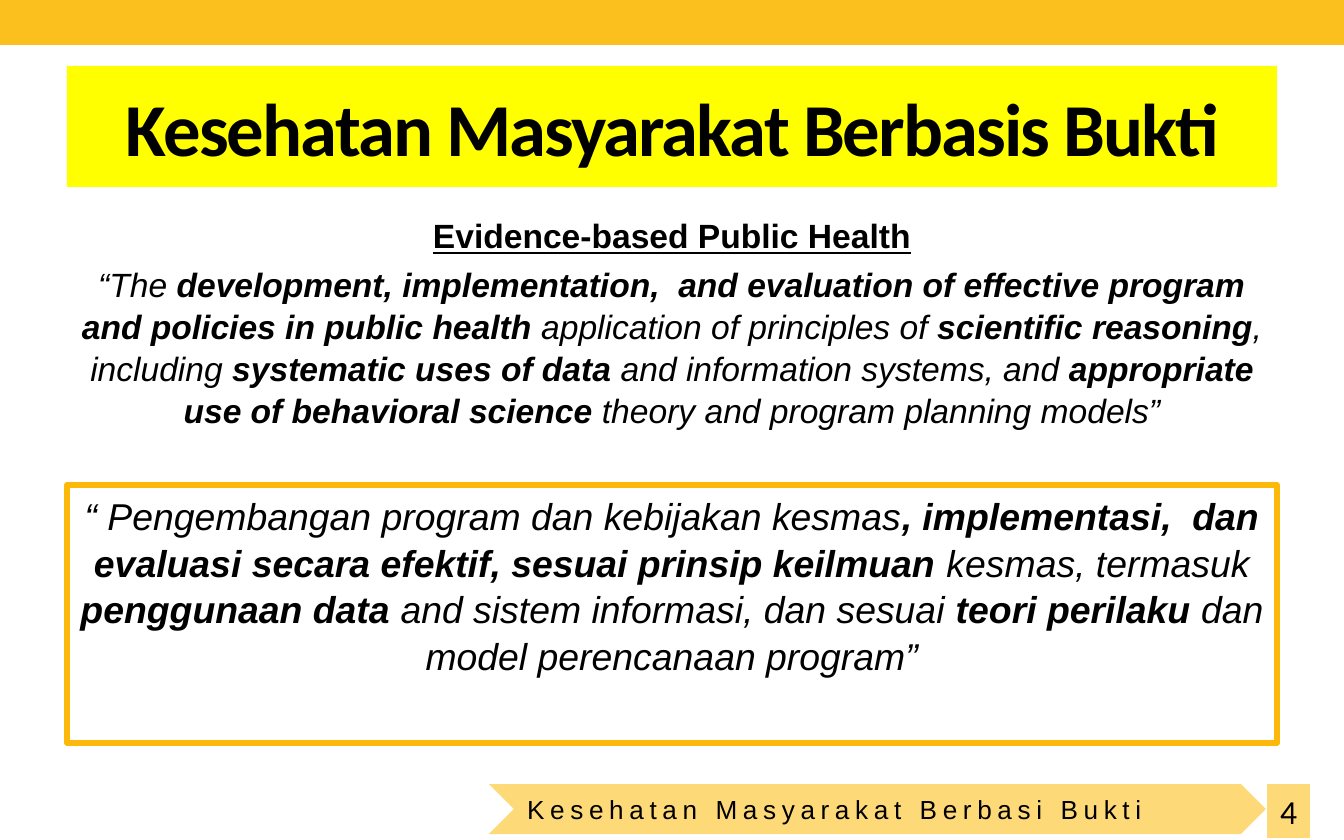
from lxml.etree import SubElement
from pptx import Presentation
from pptx.dml.color import RGBColor
from pptx.enum.shapes import MSO_SHAPE
from pptx.enum.text import MSO_ANCHOR, MSO_AUTO_SIZE, PP_ALIGN
from pptx.oxml.ns import qn
from pptx.util import Emu, Pt

WIDE, HIGH = 1344, 840
SCALE = 9144000 / WIDE
GOLD = RGBColor(0xFB, 0xC0, 0x1E)
AMBER = RGBColor(0xFE, 0xB8, 0x0A)
SAND = RGBColor(0xFD, 0xD9, 0x78)
YELLOW = RGBColor(0xFF, 0xFF, 0x00)
BLACK = RGBColor(0, 0, 0)

# Regular and bold runs take turns
ENGLISH = [
    "“The ",
    "development, implementation,  and evaluation of effective program "
    "and policies in public health ",
    "application of principles of ",
    "scientific reasoning",
    ", including ",
    "systematic uses of data ",
    "and information systems, and ",
    "appropriate use of behavioral science ",
    "theory and program planning models”",
]
LOCAL = [
    "“ Pengembangan program dan kebijakan kesmas",
    ", implementasi,  dan evaluasi secara efektif, sesuai prinsip keilmuan ",
    "kesmas, termasuk ",
    "penggunaan data ",
    "and sistem informasi, dan sesuai ",
    "teori perilaku ",
    "dan model perencanaan program”",
]


def px(n):
    return Emu(round(n * SCALE))


def place(shape, box):
    shape.left, shape.top, shape.width, shape.height = map(px, box)


def add_box(slide, box, fill=None, kind=MSO_SHAPE.RECTANGLE):
    shape = slide.shapes.add_shape(kind, *map(px, box))
    shape.shadow.inherit = False
    shape.line.fill.background()
    if fill is None:
        shape.fill.background()
    else:
        shape.fill.solid()
        shape.fill.fore_color.rgb = fill
    return shape


def add_run(para, text, size, face="Arial", bold=False, italic=False, gap=0):
    run = para.add_run()
    run.text = text
    font = run.font
    font.name, font.size = face, Pt(size)
    font.bold, font.italic = bold, italic
    font.color.rgb = BLACK
    if gap:
        run._r.get_or_add_rPr().set("spc", str(gap * 100))
    return run


def set_para(para, size):
    para.alignment = PP_ALIGN.CENTER
    para.space_before = Pt(size * 0.2)
    para.line_spacing = 1.04
    props = para._p.get_or_add_pPr()
    props.set("marL", "0")
    props.set("indent", "0")
    SubElement(props, qn("a:buNone"))


def add_quote(para, parts, size):
    set_para(para, size)
    for i, part in enumerate(parts):
        add_run(para, part, size, bold=i % 2 == 1, italic=True)


def set_frame(frame, anchor):
    frame.word_wrap = True
    frame.auto_size = MSO_AUTO_SIZE.NONE
    frame.vertical_anchor = anchor


def fill_title(slide, box):
    title = slide.shapes.title
    place(title, box)
    title.fill.solid()
    title.fill.fore_color.rgb = YELLOW
    set_frame(title.text_frame, MSO_ANCHOR.MIDDLE)
    para = title.text_frame.paragraphs[0]
    para.alignment = PP_ALIGN.CENTER
    add_run(para, "Kesehatan Masyarakat Berbasis Bukti", 40, "Calibri",
            bold=True, gap=-1)


def fill_body(slide, box):
    body = slide.placeholders[1]
    place(body, box)
    frame = body.text_frame
    set_frame(frame, MSO_ANCHOR.TOP)
    head = frame.paragraphs[0]
    set_para(head, 18)
    run = add_run(head, "Evidence-based Public Health", 18, bold=True)
    run.font.underline = True
    add_quote(frame.add_paragraph(), ENGLISH, 18)


def add_local(slide, box):
    shape = add_box(slide, box)
    shape.line.color.rgb = AMBER
    shape.line.width = Pt(3)
    SubElement(shape.line._get_or_add_ln(), qn("a:round"))
    set_frame(shape.text_frame, MSO_ANCHOR.TOP)
    add_quote(shape.text_frame.paragraphs[0], LOCAL, 20)


def add_footer(slide, box):
    left, top, width, height = box
    side = 43

    # Page number
    page = add_box(slide, (left + width - side, top, side, height), SAND)
    set_frame(page.text_frame, MSO_ANCHOR.TOP)
    para = page.text_frame.paragraphs[0]
    para.alignment = PP_ALIGN.LEFT
    add_run(para, "4", 18, "Calibri")

    # Ribbon with the topic
    ribbon = add_box(slide, (left, top, width - side - 1, height - 4), SAND,
                     MSO_SHAPE.CHEVRON)
    set_frame(ribbon.text_frame, MSO_ANCHOR.MIDDLE)
    para = ribbon.text_frame.paragraphs[0]
    para.alignment = PP_ALIGN.JUSTIFY
    add_run(para, "Kesehatan Masyarakat Berbasi Bukti", 14, gap=3)


def main():
    deck = Presentation()
    deck.slide_width, deck.slide_height = px(WIDE), px(HIGH)
    slide = deck.slides.add_slide(deck.slide_layouts[1])
    add_box(slide, (0, 0, WIDE, 45), GOLD)  # top band
    fill_title(slide, (67, 66, 1210, 121))
    fill_body(slide, (67, 207, 1210, 258))
    add_local(slide, (67, 485, 1210, 258))
    add_footer(slide, (489, 784, 821, 54))
    deck.save("out.pptx")


if __name__ == "__main__":
    main()
